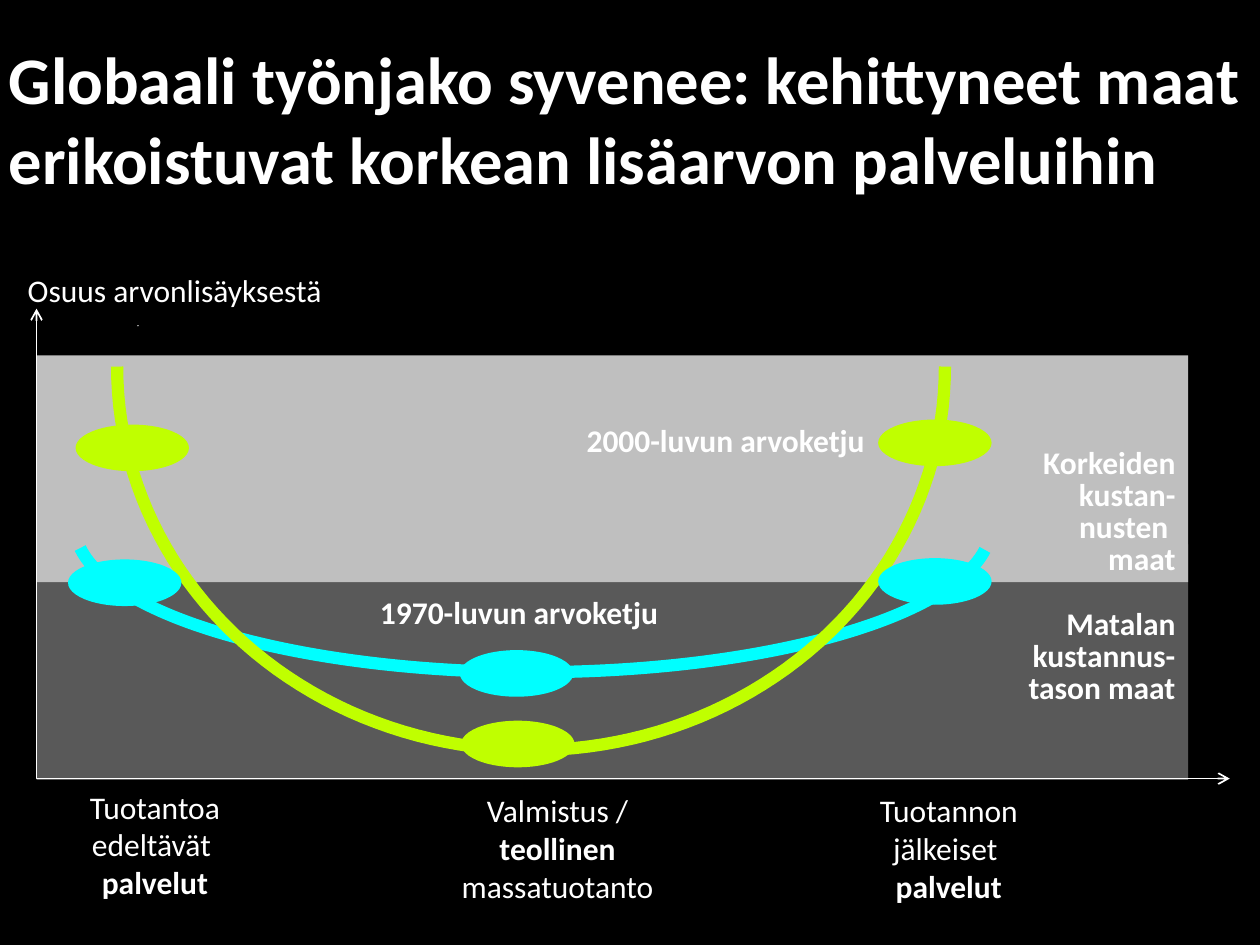
import math

from pptx import Presentation
from pptx.dml.color import RGBColor
from pptx.enum import shapes, text
from pptx.oxml.ns import qn
from pptx.util import Inches, Pt
from lxml import etree

COLORS = {
    "background": "000000",
    "text": "FFFFFF",
    "low_cost": "595959",
    "high_cost": "BFBFBF",
    "chain_1970": "00FFFF",
    "chain_2000": "C0FF00",
}
SHAPE = shapes.MSO_SHAPE
ALIGN = text.PP_ALIGN
NODE_SIZE = (0.9, 0.37)


def rgb(name):
    return RGBColor.from_string(COLORS[name])


def add_filled(slide, preset, box, color):
    area = slide.shapes.add_shape(preset, *map(Inches, box))
    area.shadow.inherit = False
    area.fill.solid()
    area.fill.fore_color.rgb = rgb(color)
    area.line.fill.background()


def style_stroke(stroke, color, width):
    stroke.shadow.inherit = False
    stroke.fill.background()
    stroke.line.color.rgb = rgb(color)
    stroke.line.width = Pt(width)


def add_polyline(slide, points, color, width):
    """Draw an open, unfilled line through points given in inches."""
    start, *rest = [(Inches(x), Inches(y)) for x, y in points]
    builder = slide.shapes.build_freeform(*start)
    builder.add_line_segments(rest, close=False)
    stroke = builder.convert_to_shape()
    style_stroke(stroke, color, width)
    return stroke


def add_axes(slide):
    axes = add_polyline(slide, [(0.29, 2.45), (0.29, 6.18), (9.76, 6.18)], "text", 1)
    line = axes.line._get_or_add_ln()
    for end in ("a:headEnd", "a:tailEnd"):
        etree.SubElement(line, qn(end), type="arrow")


def add_1970_curve(slide):
    curve = slide.shapes.add_shape(SHAPE.ARC, *map(Inches, (3.07, 0.54, 2.32, 7.27)))
    curve.rotation = 90
    curve.adjustments[0] = 163.813
    curve.adjustments[1] = 52.331
    style_stroke(curve, "chain_1970", 7)


def add_2000_curve(slide, steps=90):
    """Draw the lower half of an ellipse."""
    center_x, top, radius_x, radius_y = 4.215, 2.91, 3.285, 3.045
    angles = [math.pi * step / steps for step in range(steps + 1)]
    points = [(center_x - radius_x * math.cos(a), top + radius_y * math.sin(a))
              for a in angles]
    add_polyline(slide, points, "chain_2000", 7)


def add_label(slide, box, lines, size=18, align=ALIGN.LEFT, bold=False, spacing=None):
    """Add one paragraph per line; a line is a string or a list of (words, bold) runs."""
    frame = slide.shapes.add_textbox(*map(Inches, box)).text_frame
    frame.word_wrap = True
    frame.margin_left = frame.margin_right = frame.margin_top = frame.margin_bottom = 0
    for index, line in enumerate(lines):
        paragraph = frame.paragraphs[0] if index == 0 else frame.add_paragraph()
        paragraph.alignment = align
        paragraph.line_spacing = spacing
        paragraph.font.name = "Calibri"
        paragraph.font.size = Pt(size)
        paragraph.font.color.rgb = rgb("text")
        if isinstance(line, str):
            paragraph.font.bold = bold
            paragraph.add_run().text = line
            continue
        for words, run_bold in line:
            run = paragraph.add_run()
            run.text = words
            run.font.bold = run_bold
    return frame


def main():
    deck = Presentation()
    deck.slide_width, deck.slide_height = Inches(10), Inches(7.5)
    slide = deck.slides.add_slide(deck.slide_layouts[6])
    slide.background.fill.solid()
    slide.background.fill.fore_color.rgb = rgb("background")

    add_filled(slide, SHAPE.RECTANGLE, (0.29, 4.32, 9.14, 1.87), "low_cost")
    add_filled(slide, SHAPE.RECTANGLE, (0.29, 2.82, 9.14, 1.8), "high_cost")
    add_label(slide, (0.22, 2.11, 3.66, 0.25), ["Osuus arvonlisäyksestä"], spacing=1.15)
    add_axes(slide)
    add_filled(slide, SHAPE.OVAL, (1.09, 2.58, 0.01, 0.01), "text")

    for left, top, chain in [(4.64, 3.39, "2000-luvun arvoketju"),
                             (3, 4.75, "1970-luvun arvoketju")]:
        add_label(slide, (left, top, 2.24, 0.37), [chain],
                  align=ALIGN.CENTER, bold=True, spacing=0.85)
    countries = add_label(
        slide, (7.2, 3.56, 2.13, 1.82),
        ["Korkeiden", "kustan-", "nusten ", "maat", "Matalan", "kustannus-", "tason maat"],
        align=ALIGN.RIGHT, bold=True, spacing=0.85)
    countries.paragraphs[4].space_before = Pt(18.5)

    add_1970_curve(slide)
    add_2000_curve(slide)

    stages = [
        (0.54, 6.25, 1.38, ["Tuotantoa", "edeltävät ", [("palvelut", True)]]),
        (3.55, 6.28, 1.75,
         ["Valmistus /", [("teollinen", True), (" massatuotanto", False)]]),
        (6.84, 6.28, 1.38, ["Tuotannon", "jälkeiset ", [("palvelut", True)]]),
    ]
    for left, top, width, lines in stages:
        add_label(slide, (left, top, width, 0.91), lines, align=ALIGN.CENTER)

    nodes = {
        "chain_2000": [(0.6, 3.37), (3.66, 5.72), (6.97, 3.33)],
        "chain_1970": [(0.54, 4.44), (3.65, 5.16), (6.97, 4.43)],
    }
    for chain, corners in nodes.items():
        for corner in corners:
            add_filled(slide, SHAPE.OVAL, corner + NODE_SIZE, chain)

    add_label(
        slide, (0.07, 0.3, 9.88, 1.28),
        ["Globaali työnjako syvenee: kehittyneet maat erikoistuvat korkean lisäarvon palveluihin"],
        size=38, bold=True)
    deck.save("out.pptx")


if __name__ == "__main__":
    main()
